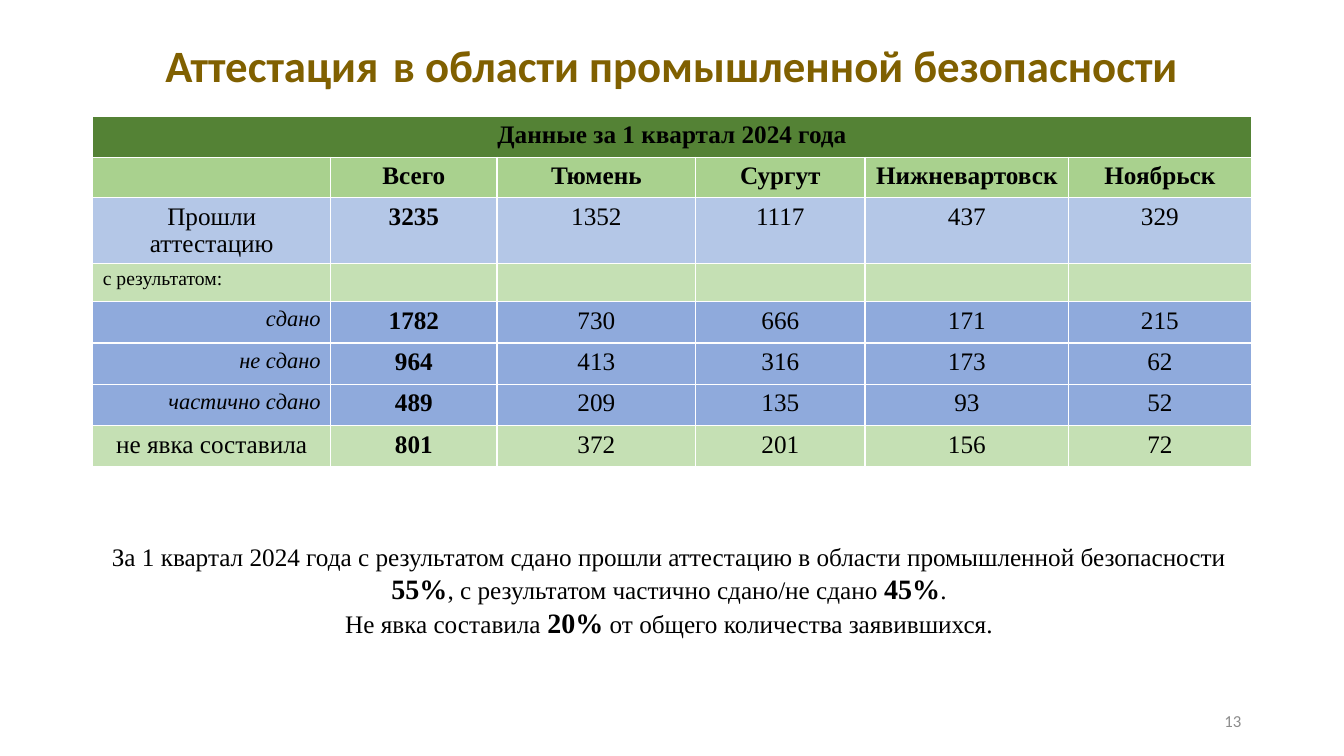
from dataclasses import dataclass
from pptx import Presentation
from pptx.dml.color import RGBColor
from pptx.enum.text import MSO_ANCHOR, PP_ALIGN
from pptx.util import Inches, Pt


@dataclass(frozen=True)
class Theme:
    """Colours, fonts and type sizes of the slide."""
    gold: str = "806000"
    ink: str = "000000"
    gray: str = "8C8C8C"
    dark: str = "548235"
    green: str = "A9D18E"
    pale: str = "C5E0B4"
    sky: str = "B4C7E7"
    blue: str = "8FAADC"
    sans: str = "Calibri"
    serif: str = "Times New Roman"
    head: int = 32
    gap: int = 44
    strong: int = 20
    main: int = 18
    sub: int = 16
    small: int = 14
    foot: int = 12


THEME = Theme()
LEFT, MID, RIGHT = PP_ALIGN.LEFT, PP_ALIGN.CENTER, PP_ALIGN.RIGHT
COLS = (2.36, 1.65, 1.97, 1.68, 2.02, 1.81)
CAPTION = "Данные за 1 квартал 2024 года"
CITIES = ("", "Всего", "Тюмень", "Сургут", "Нижневартовск", "Ноябрьск")
PASSED = ("Прошли аттестацию", 3235, 1352, 1117, 437, 329)
RESULT = ("с результатом:",) + ("",) * 5
GRADES = (
    ("сдано", 1782, 730, 666, 171, 215),
    ("не сдано", 964, 413, 316, 173, 62),
    ("частично сдано", 489, 209, 135, 93, 52),
)
ABSENT = ("не явка составила", 801, 372, 201, 156, 72)
NOTE = (
    (("За 1 квартал 2024 года с результатом сдано прошли аттестацию "
      "в области промышленной безопасности ", False),
     ("55%", True), (", с результатом частично сдано/не сдано ", False),
     ("45%", True), (".", False)),
    (("Не явка составила ", False), ("20%", True),
     (" от общего количества заявившихся.", False)),
)


def style(font, size, color=THEME.ink, face=THEME.serif, bold=False, slant=False):
    """Set every trait of a font."""
    font.size, font.name = Pt(size), face
    font.bold, font.italic = bold, slant
    font.color.rgb = RGBColor.from_string(color)


def add_title(slide, box):
    """Fill the title placeholder."""
    title = slide.shapes.title
    title.left, title.top, title.width, title.height = map(Inches, box)
    frame = title.text_frame
    frame.vertical_anchor = MSO_ANCHOR.MIDDLE
    line = frame.paragraphs[0]
    line.alignment, line.line_spacing = MID, 0.9
    for text, size in (("Аттестация", THEME.head), (" ", THEME.gap),
                       ("в области промышленной безопасности", THEME.head)):
        run = line.add_run()
        run.text = text
        style(run.font, size, THEME.gold, THEME.sans, True)


def fill_cell(cell, text, fill, size=THEME.main, align=MID, bold=False, slant=False):
    """Write and colour one table cell."""
    cell.fill.solid()
    cell.fill.fore_color.rgb = RGBColor.from_string(fill)
    line = cell.text_frame.paragraphs[0]
    line.text, line.alignment = str(text), align
    style(line.font, size, bold=bold, slant=slant)


def add_grid(slide, box):
    """Build the results table."""
    rows = [
        (CITIES, THEME.green, 0.4, THEME.main, MID),
        (PASSED, THEME.sky, 0.65, THEME.main, MID),
        (RESULT, THEME.pale, 0.38, THEME.small, LEFT),
        *((grade, THEME.blue, 0.41, THEME.sub, RIGHT) for grade in GRADES),
        (ABSENT, THEME.pale, 0.41, THEME.main, MID),
    ]
    frame = slide.shapes.add_table(len(rows) + 1, len(COLS), *map(Inches, box))
    table = frame.table
    table.horz_banding = False
    for col, width in zip(table.columns, COLS):
        col.width = Inches(width)
    table.rows[0].height = Inches(0.41)
    table.cell(0, 0).merge(table.cell(0, len(COLS) - 1))
    fill_cell(table.cell(0, 0), CAPTION, THEME.dark, bold=True)
    for r, (texts, fill, height, size, align) in enumerate(rows, 1):
        table.rows[r].height = Inches(height)
        fill_cell(table.cell(r, 0), texts[0], fill, size, align, slant=align == RIGHT)
        for c, text in enumerate(texts[1:], 1):
            fill_cell(table.cell(r, c), text, fill,
                      size if align == LEFT else THEME.main,
                      bold=c == 1 or r == 1)


def add_note(slide, box):
    """Write the summary below the table."""
    frame = slide.shapes.add_textbox(*map(Inches, box)).text_frame
    frame.word_wrap = True
    for i, parts in enumerate(NOTE):
        line = frame.add_paragraph() if i else frame.paragraphs[0]
        line.alignment = MID
        for text, strong in parts:
            run = line.add_run()
            run.text = text
            style(run.font, THEME.strong if strong else THEME.main, bold=strong)


def add_number(slide, box):
    """Write the page number."""
    frame = slide.shapes.add_textbox(*map(Inches, box)).text_frame
    frame.word_wrap = True
    frame.vertical_anchor = MSO_ANCHOR.MIDDLE
    line = frame.paragraphs[0]
    line.text, line.alignment = "13", RIGHT
    style(line.font, THEME.foot, THEME.gray, THEME.sans)


def main():
    """Build and save the slide."""
    deck = Presentation()
    deck.slide_width, deck.slide_height = Inches(13.33), Inches(7.5)
    slide = deck.slides.add_slide(deck.slide_layouts[5])
    left, width = 0.92, sum(COLS)
    add_title(slide, (left, 0.21, width, 0.83))
    add_grid(slide, (left, 1.15, width, 3.48))
    add_number(slide, (left + width - 3, 6.95, 3, 0.4))
    add_note(slide, (0.89, 5.32, width, 1.08))
    deck.save("out.pptx")


if __name__ == "__main__":
    main()
